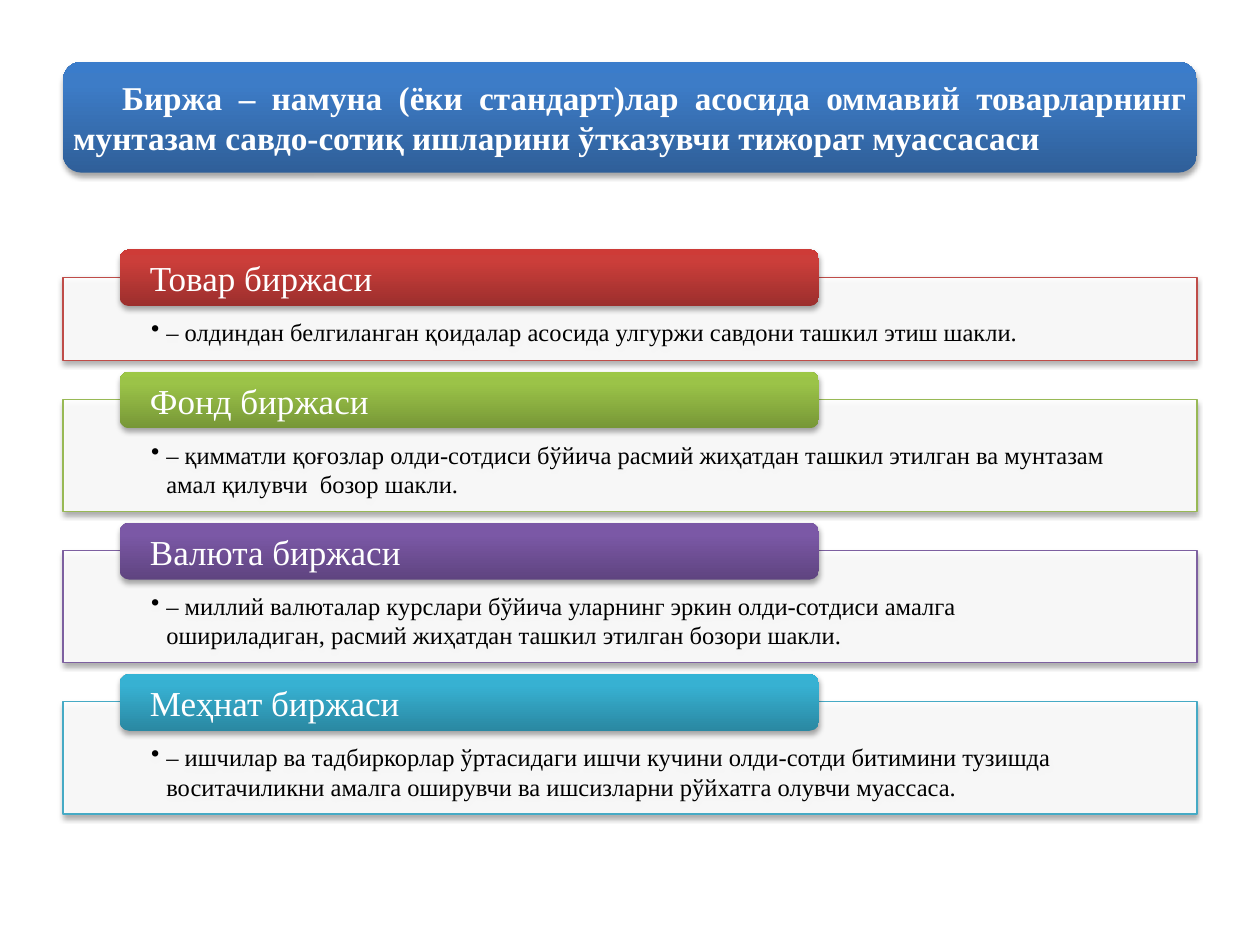
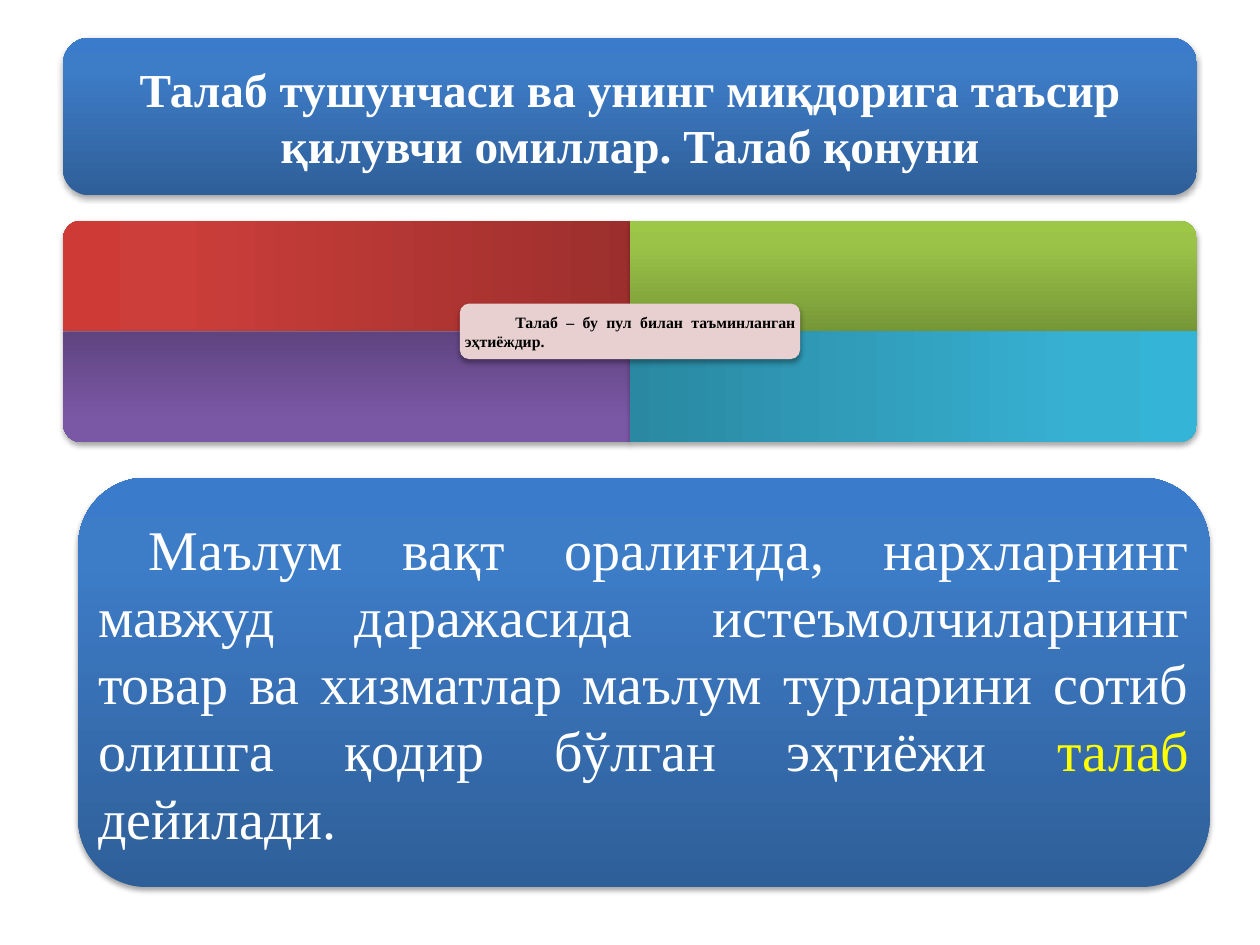
"""Build two slides on kinds of exchanges and on the notion of demand."""
from dataclasses import dataclass
from typing import Optional

import pptx
import pptx.dml.color
import pptx.enum.shapes
import pptx.enum.text
import pptx.oxml
import pptx.oxml.ns
import pptx.util

Inches = pptx.util.Inches
Pt = pptx.util.Pt
SHAPE = pptx.enum.shapes.MSO_SHAPE
ALIGN = pptx.enum.text.PP_ALIGN
ANCHOR = pptx.enum.text.MSO_ANCHOR

FONT = "Times New Roman"
COLORS = {"white": "FFFFFF", "black": "000000", "yellow": "FFFF00", "pink": "E8D0D0",
          "red": "BF4C48", "green": "98B955", "purple": "7D60A0", "aqua": "46AAC5"}
GRADIENTS = {
    "blue": ("2F5F99", "3D7CC7", "3A7CCB"),
    "red": ("9C2F2D", "CB3E3A", "CE3B37"),
    "green": ("779737", "9BC348", "9DC746"),
    "purple": ("5F4480", "7B58A6", "7C57A8"),
    "aqua": ("2A88A2", "37B1D2", "34B4D6"),
}
STOPS = (0, 80, 100)
LEFT, WIDTH = 0.5, 9
CORNER_INSET = 0.0488


@dataclass
class Box:
    left: float
    top: float
    width: float
    height: float

    def emu(self) -> tuple:
        """Return the four lengths."""
        return tuple(Inches(v) for v in (self.left, self.top, self.width, self.height))


@dataclass
class Style:
    size: float
    color: str = "white"
    bold: bool = False
    align: ALIGN = ALIGN.LEFT
    indent: float = 0
    bullet: Optional[str] = None


@dataclass
class Exchange:
    color: str
    name: str
    text: str
    height: float = 0.89


@dataclass
class Quarter:
    color: str
    col: int
    row: int
    rotation: int


EXCHANGES = [
    Exchange("red", "Товар биржаси",
             "– олдиндан белгиланган қоидалар асосида улгуржи савдони ташкил этиш шакли.", 0.66),
    Exchange("green", "Фонд биржаси",
             "– қимматли қоғозлар олди-сотдиси бўйича расмий жиҳатдан ташкил этилган ва "
             "мунтазам амал қилувчи  бозор шакли."),
    Exchange("purple", "Валюта биржаси",
             "– миллий валюталар курслари бўйича уларнинг эркин олди-сотдиси амалга "
             "ошириладиган, расмий жиҳатдан ташкил этилган бозори шакли."),
    Exchange("aqua", "Меҳнат биржаси",
             "– ишчилар ва тадбиркорлар ўртасидаги ишчи кучини олди-сотди битимини тузишда "
             "воситачиликни амалга оширувчи ва ишсизларни рўйхатга олувчи муассаса."),
]
QUARTERS = [Quarter("red", 0, 0, 270), Quarter("green", 1, 0, 0),
            Quarter("purple", 0, 1, 180), Quarter("aqua", 1, 1, 90)]


def rgb(name: str) -> pptx.dml.color.RGBColor:
    """Return a named colour."""
    return pptx.dml.color.RGBColor.from_string(COLORS[name])


def add_xml(parent, xml: str) -> None:
    """Append a DrawingML element."""
    tag, rest = xml.split(" ", 1)
    parent.append(pptx.oxml.parse_xml(f'{tag} {pptx.oxml.ns.nsdecls("a")} {rest}'))


def add_panel(slide, kind: SHAPE, box: Box, gradient: str = "", fill: str = "",
              line: str = "", opacity: int = 100, rotation: int = 0):
    """Draw a preset shape with the shared soft shadow."""
    sp = slide.shapes.add_shape(kind, *box.emu())
    sp.rotation = rotation
    spPr = sp._element.spPr
    if gradient:
        stops = "".join(f'<a:gs pos="{pos * 1000}"><a:srgbClr val="{c}"/></a:gs>'
                        for pos, c in zip(STOPS, GRADIENTS[gradient]))
        add_xml(spPr, f'<a:gradFill rotWithShape="1"><a:gsLst>{stops}</a:gsLst>'
                      '<a:lin ang="16200000" scaled="0"/></a:gradFill>')
    else:
        sp.fill.solid()
        sp.fill.fore_color.rgb = rgb(fill)
        if opacity < 100:
            add_xml(spPr.find(".//" + pptx.oxml.ns.qn("a:srgbClr")),
                    f'<a:alpha val="{opacity * 1000}"/>')
    if line:
        sp.line.color.rgb = rgb(line)
        sp.line.width = Pt(0.75)
    else:
        sp.line.fill.background()
    add_xml(spPr, f'<a:effectLst ><a:outerShdw blurRad="{Pt(3.1)}" dist="{Pt(1.8)}" '
                  'dir="5400000" rotWithShape="0"><a:srgbClr val="000000">'
                  '<a:alpha val="35000"/></a:srgbClr></a:outerShdw></a:effectLst>')
    return sp


def write(sp, runs: list, style: Style, insets: tuple, anchor=ANCHOR.MIDDLE) -> None:
    """Write one paragraph of (text, colour) runs; a newline breaks the line."""
    tf = sp.text_frame
    tf.word_wrap = True
    tf.auto_size = pptx.enum.text.MSO_AUTO_SIZE.NONE
    tf.vertical_anchor = anchor
    tf.margin_left, tf.margin_top, tf.margin_right, tf.margin_bottom = map(Inches, insets)
    p = tf.paragraphs[0]
    p.alignment = style.align
    pPr = p._p.get_or_add_pPr()
    pPr.set("marL", str(Inches(max(0, -style.indent))))
    pPr.set("indent", str(Inches(style.indent)))
    if style.bullet:
        add_xml(pPr, f'<a:buChar char="{style.bullet}"/>')
    for text, color in runs:
        for i, part in enumerate(text.split("\n")):
            if i:
                p.add_line_break()
            r = p.add_run()
            r.text = part
            r.font.name = FONT
            r.font.size = Pt(style.size)
            r.font.bold = style.bold
            r.font.color.rgb = rgb(color or style.color)


def round_insets(height: float, side: float, vertical: float) -> tuple:
    """Reduce insets by what a rounded rectangle already adds."""
    built_in = CORNER_INSET * height
    x, y = (max(0, v - built_in) for v in (side, vertical))
    return x, y, x, y


def add_titled_slide(prs, text: str, box: Box, style: Style, inset: float):
    """Add a slide whose title lies on a blue band."""
    slide = prs.slides.add_slide(prs.slide_layouts[5])
    add_panel(slide, SHAPE.ROUNDED_RECTANGLE, box, gradient="blue")
    title = slide.shapes.title
    title.left, title.top, title.width, title.height = box.emu()
    write(title, [(text, None)], style, (inset,) * 4)
    slide.shapes._spTree.append(title._element)
    return slide


def build_exchanges(prs) -> None:
    """Build the list of exchange kinds."""
    slide = add_titled_slide(
        prs, "Биржа – намуна (ёки стандарт)лар асосида оммавий товарларнинг "
             "мунтазам савдо-сотиқ ишларини ўтказувчи тижорат муассасаси",
        Box(LEFT, 0.49, WIDTH, 0.88), Style(19, bold=True, align=ALIGN.JUSTIFY, indent=0.39), 0.08)
    tab_height, overlap, gap = 0.45, 0.22, 0.09
    top = 1.98
    for item in EXCHANGES:
        body = add_panel(slide, SHAPE.RECTANGLE, Box(LEFT, top + overlap, WIDTH, item.height),
                         fill="white", line=item.color, opacity=90)
        write(body, [(item.text, None)], Style(14, "black", indent=-0.12, bullet="•"),
              (0.7, 0.32, 0.7, 0.11), ANCHOR.TOP)
        tab = add_panel(slide, SHAPE.ROUNDED_RECTANGLE, Box(0.95, top, 5.55, tab_height),
                        gradient=item.color)
        write(tab, [(item.name, None)], Style(20), round_insets(tab_height, 0.24, 0))
        top += overlap + item.height + gap


def build_demand(prs) -> None:
    """Build the definition of demand."""
    slide = add_titled_slide(
        prs, "Талаб тушунчаси ва унинг миқдорига таъсир\nқилувчи омиллар. Талаб қонуни",
        Box(LEFT, 0.3, WIDTH, 1.25), Style(27, bold=True, align=ALIGN.CENTER), 0.11)
    cell_w, cell_h = WIDTH / 2, 0.88
    for q in QUARTERS:
        x = LEFT + cell_w * (q.col + 0.5)
        y = 1.75 + cell_h * (q.row + 0.5)
        w, h = (cell_h, cell_w) if q.rotation % 180 else (cell_w, cell_h)
        add_panel(slide, SHAPE.ROUND_1_RECTANGLE, Box(x - w / 2, y - h / 2, w, h),
                  gradient=q.color, rotation=q.rotation)
    core = Box(3.65, 2.41, 2.7, 0.44)
    sp = add_panel(slide, SHAPE.ROUNDED_RECTANGLE, core, fill="pink")
    write(sp, [("Талаб – бу пул билан таъминланган эҳтиёждир.", None)],
          Style(9, "black", True, ALIGN.JUSTIFY, 0.4), round_insets(core.height, 0.04, 0.04))
    definition = Box(0.62, 3.79, 8.98, 3.25)
    sp = add_panel(slide, SHAPE.ROUNDED_RECTANGLE, definition, gradient="blue")
    write(sp, [("Маълум вақт оралиғида, нархларнинг мавжуд даражасида истеъмолчиларнинг товар "
                "ва хизматлар маълум турларини сотиб олишга қодир бўлган эҳтиёжи ", None),
               ("талаб ", "yellow"), ("дейилади.", None)],
          Style(32, align=ALIGN.JUSTIFY, indent=0.4), round_insets(definition.height, 0.13, 0.13))


def main() -> None:
    """Build and save the presentation."""
    prs = pptx.Presentation()
    prs.slide_width, prs.slide_height = Inches(10), Inches(7.5)
    build_exchanges(prs)
    build_demand(prs)
    prs.save("out.pptx")


if __name__ == "__main__":
    main()
